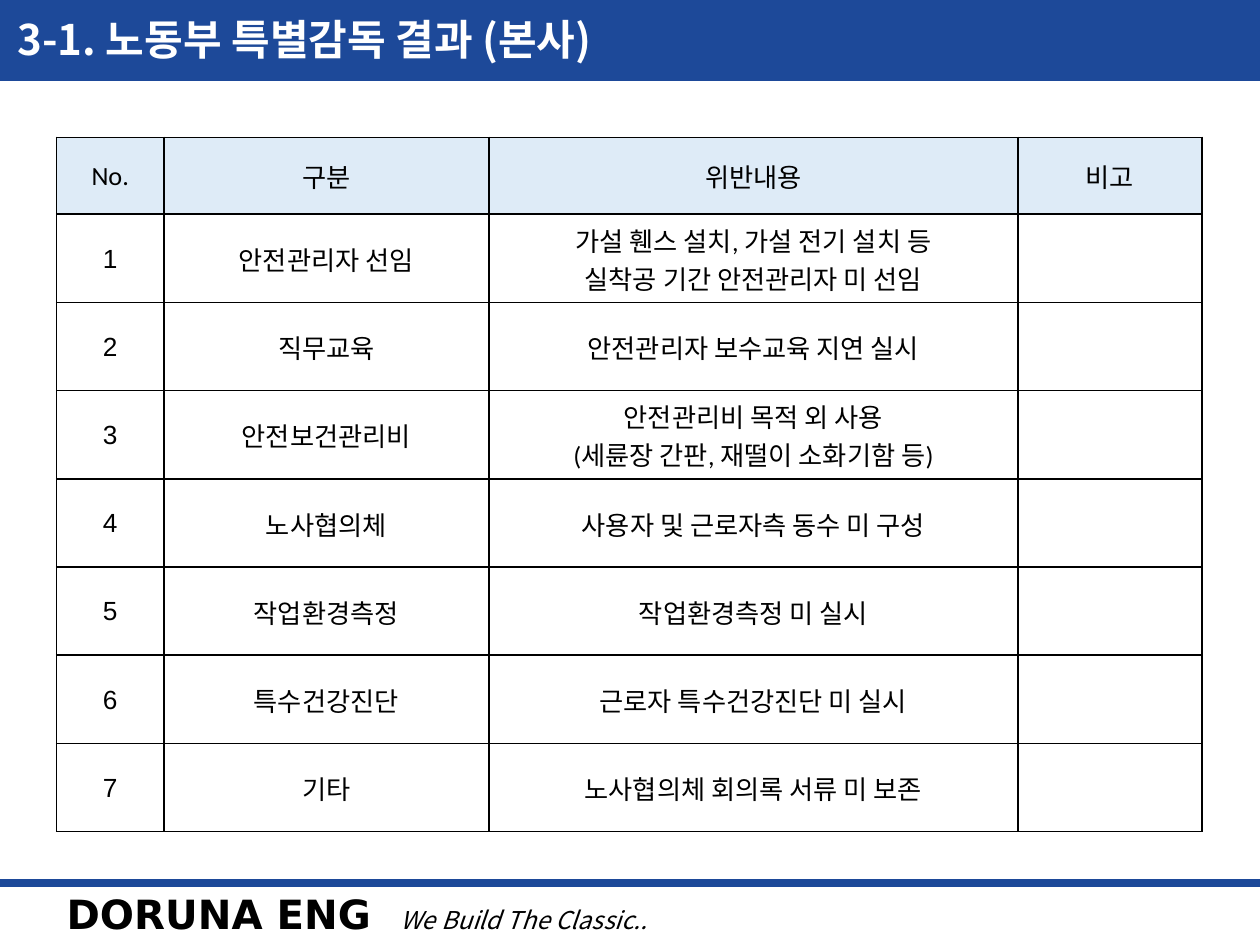
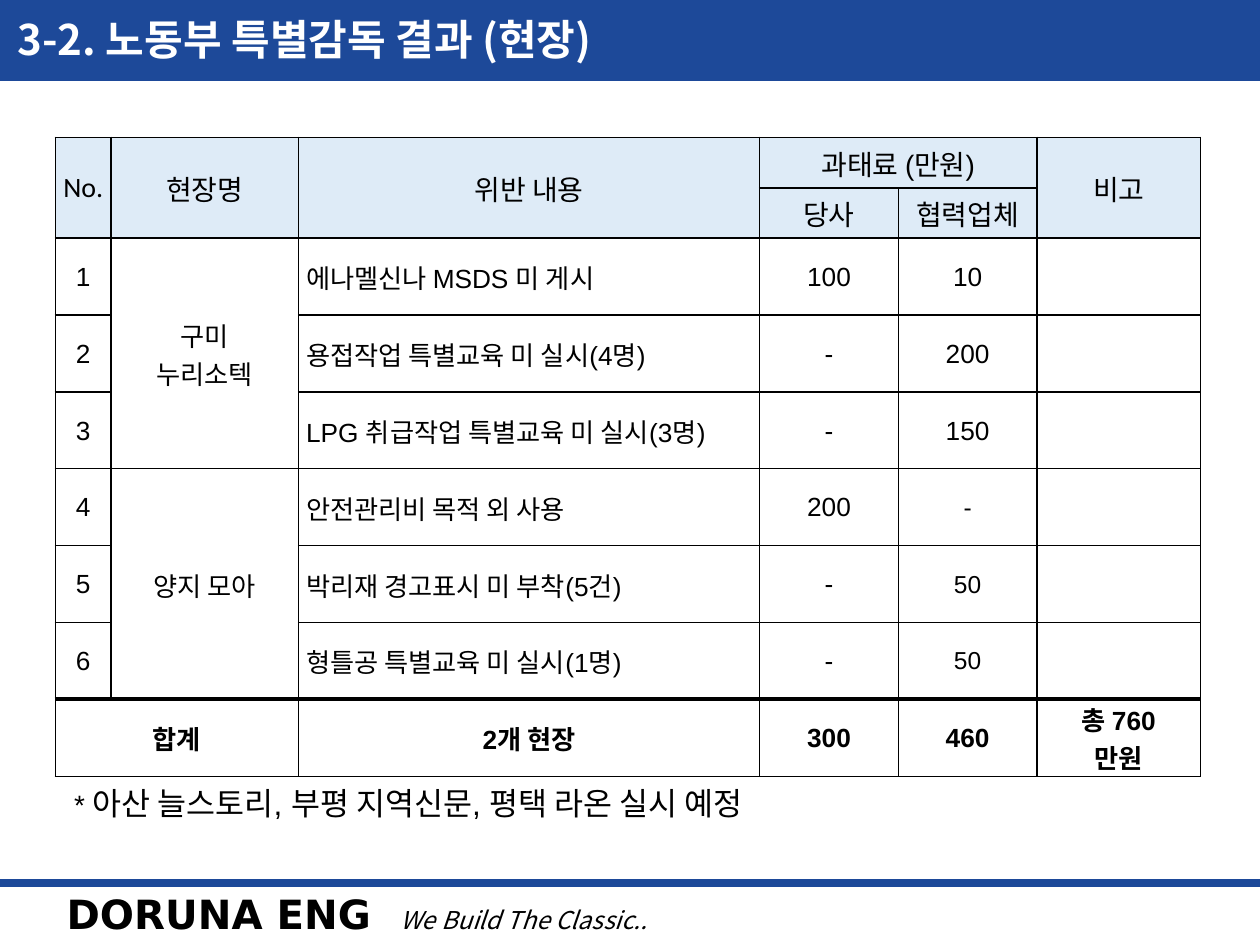
from dataclasses import dataclass

from lxml.etree import SubElement
from pptx import Presentation
from pptx.dml.color import RGBColor
from pptx.enum.shapes import MSO_CONNECTOR, MSO_SHAPE
from pptx.enum.text import MSO_ANCHOR, MSO_AUTO_SIZE, PP_ALIGN
from pptx.oxml.ns import qn
from pptx.util import Inches, Pt


@dataclass(frozen=True)
class Theme:
    blue: RGBColor = RGBColor(0x1D, 0x49, 0x99)
    header_fill: RGBColor = RGBColor(0xDE, 0xEB, 0xF7)
    white: RGBColor = RGBColor(0xFF, 0xFF, 0xFF)
    black: RGBColor = RGBColor(0, 0, 0)
    korean_font: str = "Noto Sans CJK KR"
    number_font: str = "Arial"
    table_font: str = "Calibri"
    company_font: str = "DejaVu Sans"
    title_size: int = 24
    company_size: int = 23
    note_size: int = 18
    header_size: int = 16
    body_size: int = 15
    small_size: int = 14
    rule: float = 1
    heavy_rule: float = 2.25


THEME = Theme()
TABLE_TOP = 1.09

HEAD_OFFICE_ROWS = [
    ["No.", "구분", "위반내용", "비고"],
    ["1", "안전관리자 선임", "가설 휀스 설치, 가설 전기 설치 등\n실착공 기간 안전관리자 미 선임", ""],
    ["2", "직무교육", "안전관리자 보수교육 지연 실시", ""],
    ["3", "안전보건관리비", "안전관리비 목적 외 사용\v(세륜장 간판, 재떨이 소화기함 등)", ""],
    ["4", "노사협의체", "사용자 및 근로자측 동수 미 구성", ""],
    ["5", "작업환경측정", "작업환경측정 미 실시", ""],
    ["6", "특수건강진단", "근로자 특수건강진단 미 실시", ""],
    ["7", "기타", "노사협의체 회의록 서류 미 보존", ""],
]

SITE_ROWS = [
    ["No.", "현장명", "위반 내용", "과태료 (만원)", "", "비고"],
    ["", "", "", "당사", "협력업체", ""],
    ["1", "구미\n누리소텍", "에나멜신나 MSDS 미 게시", "100", "10", ""],
    ["2", "", "용접작업 특별교육 미 실시(4명)", "-", "200", ""],
    ["3", "", "LPG 취급작업 특별교육 미 실시(3명)", "-", "150", ""],
    ["4", "양지 모아", "안전관리비 목적 외 사용", "200", "-", ""],
    ["5", "", "박리재 경고표시 미 부착(5건)", "-", "50", ""],
    ["6", "", "형틀공 특별교육 미 실시(1명)", "-", "50", ""],
    ["합계", "", "2개 현장", "300", "460", "총 760\v만원"],
]
SITE_HEADER_ROWS = 2
SITE_TOTAL_ROW = len(SITE_ROWS) - 1
VIOLATION_COLUMN, FINE_COLUMN, PARTNER_COLUMN = 2, 3, 4
SITE_MERGES = [
    (0, 0, 1, 0), (0, 1, 1, 1), (0, 2, 1, 2), (0, 3, 0, 4), (0, 5, 1, 5),
    (2, 1, 4, 1), (5, 1, 7, 1), (8, 0, 8, 1),
]


def set_values(target, values):
    for name, value in values.items():
        setattr(target, name, value)


def style_run(run, font, size, color=THEME.black, bold=False, italic=False):
    set_values(run.font, {"name": font, "size": Pt(size), "bold": bold, "italic": italic})
    run.font.color.rgb = color
    SubElement(run.font._element, qn("a:ea"), typeface=THEME.korean_font)


def add_run(paragraph, text, font, size, **style):
    run = paragraph.add_run()
    run.text = text
    style_run(run, font, size, **style)


def add_text_box(slide, left, top, width, height, wrap):
    box = slide.shapes.add_textbox(Inches(left), Inches(top), Inches(width), Inches(height))
    box.text_frame.word_wrap = wrap
    return box


def add_title_band(slide):
    band = slide.shapes.add_shape(MSO_SHAPE.RECTANGLE, 0, 0, Inches(10), Inches(0.64))
    band.shadow.inherit = False
    band.fill.solid()
    band.fill.fore_color.rgb = THEME.blue
    band.line.color.rgb = THEME.blue
    band.line.width = Pt(0.75)
    return band


def add_footer_rule(slide):
    rule = slide.shapes.add_connector(
        MSO_CONNECTOR.STRAIGHT, 0, Inches(7.01), Inches(10), Inches(7.01))
    rule.line.color.rgb = THEME.blue
    rule.line.width = Pt(4.5)
    SubElement(rule._element.spPr, qn("a:effectLst"))
    return rule


def add_footer_text(slide):
    box = add_text_box(slide, 0.43, 7.08, 8.18, 0.41, wrap=True)
    paragraph = box.text_frame.paragraphs[0]
    tabs = SubElement(paragraph._p.get_or_add_pPr(), qn("a:tabLst"))
    SubElement(tabs, qn("a:tab"), pos=str(Inches(2.65)), algn="l")
    paragraph.line_spacing = 0.8
    add_run(paragraph, "DORUNA ENG\t", THEME.company_font, THEME.company_size, bold=True)
    add_run(paragraph, "We Build The Classic..", THEME.korean_font, THEME.small_size, italic=True)
    return box


def move_to_layout(layout, shapes):
    """Place shapes behind the layout's placeholders, so that every slide shows them."""
    for position, shape in enumerate(shapes, start=2):
        layout.shapes._spTree.insert(position, shape._element)


def set_title(slide, text):
    title = slide.shapes.title
    set_values(title, {"left": Inches(0.04), "top": Inches(0.06),
                       "width": Inches(9.5), "height": Inches(0.5)})
    frame = title.text_frame
    frame.text = text
    set_values(frame, {"auto_size": MSO_AUTO_SIZE.NONE, "vertical_anchor": MSO_ANCHOR.MIDDLE})
    frame.paragraphs[0].alignment = PP_ALIGN.LEFT
    style_run(frame.paragraphs[0].runs[0], THEME.korean_font, THEME.title_size,
              color=THEME.white, bold=True)


def add_cell_borders(cell, top, bottom):
    properties = cell._tc.get_or_add_tcPr()
    widths = {"a:lnL": THEME.rule, "a:lnR": THEME.rule, "a:lnT": top, "a:lnB": bottom}
    for tag, width in widths.items():
        line = SubElement(properties, qn(tag), w=str(Pt(width)))
        fill = SubElement(line, qn("a:solidFill"))
        SubElement(fill, qn("a:srgbClr"), val=str(THEME.black))


def fill_cell(cell, text, fill, font, size, bold=False,
              alignment=PP_ALIGN.CENTER, margin_left=0.01):
    set_values(cell, {
        "text": text, "vertical_anchor": MSO_ANCHOR.MIDDLE,
        "margin_left": Inches(margin_left), "margin_right": Inches(0.01),
        "margin_top": Inches(0.01), "margin_bottom": 0,
    })
    cell.fill.solid()
    cell.fill.fore_color.rgb = fill
    for paragraph in cell.text_frame.paragraphs:
        paragraph.alignment = alignment
        for run in paragraph.runs:
            style_run(run, font, size, bold=bold)


def add_result_table(slide, rows, left, widths, heights, cell_format, merges=(), total_row=None):
    """cell_format(row, column) gives the look of a cell; a heavy rule runs above total_row."""
    frame = slide.shapes.add_table(
        len(rows), len(widths), Inches(left), Inches(TABLE_TOP),
        Inches(sum(widths)), Inches(sum(heights)))
    table = frame.table
    set_values(table, {"first_row": False, "horz_banding": False})
    for column, width in zip(table.columns, widths):
        column.width = Inches(width)
    for row, height in zip(table.rows, heights):
        row.height = Inches(height)
    for row_index, texts in enumerate(rows):
        top = THEME.heavy_rule if row_index == total_row else THEME.rule
        bottom = THEME.heavy_rule if row_index + 1 == total_row else THEME.rule
        for column_index, text in enumerate(texts):
            cell = table.cell(row_index, column_index)
            add_cell_borders(cell, top, bottom)
            fill_cell(cell, text, **cell_format(row_index, column_index))
    for first_row, first_column, last_row, last_column in merges:
        table.cell(first_row, first_column).merge(table.cell(last_row, last_column))


def head_office_format(row, column):
    is_number = row > 0 and column == 0
    return {
        "fill": THEME.white if row else THEME.header_fill,
        "font": THEME.number_font if is_number else THEME.table_font,
        "size": THEME.body_size,
    }


def site_format(row, column):
    if row < SITE_HEADER_ROWS:
        is_fine = column in (FINE_COLUMN, PARTNER_COLUMN)
        return {"fill": THEME.header_fill, "size": THEME.header_size,
                "font": THEME.number_font if is_fine else THEME.table_font}
    is_total = row == SITE_TOTAL_ROW
    is_small = column == PARTNER_COLUMN and 5 <= row < SITE_TOTAL_ROW
    values = {"fill": THEME.white, "font": THEME.number_font, "bold": is_total,
              "size": THEME.small_size if is_small else THEME.body_size}
    if column == VIOLATION_COLUMN and not is_total:
        values.update(alignment=PP_ALIGN.LEFT, margin_left=0.06)
    return values


def add_note(slide, text):
    box = add_text_box(slide, 0.49, 6.17, 6.16, 0.4, wrap=False)
    paragraph = box.text_frame.paragraphs[0]
    add_run(paragraph, "* ", THEME.number_font, THEME.header_size)
    add_run(paragraph, text, THEME.number_font, THEME.note_size)


def main():
    presentation = Presentation()
    set_values(presentation, {"slide_width": Inches(10), "slide_height": Inches(7.5)})
    layout = presentation.slide_layouts.get_by_name("Title Only")
    head_office = presentation.slides.add_slide(layout)
    move_to_layout(layout, [add_title_band(head_office), add_footer_rule(head_office),
                            add_footer_text(head_office)])

    set_title(head_office, "3-1. 노동부 특별감독 결과 (본사)")
    add_result_table(head_office, HEAD_OFFICE_ROWS, 0.45, [0.85, 2.58, 4.2, 1.46],
                     [0.61] + [0.7] * 7, head_office_format)

    sites = presentation.slides.add_slide(layout)
    set_title(sites, "3-2. 노동부 특별감독 결과 (현장)")
    add_result_table(sites, SITE_ROWS, 0.44, [0.44, 1.49, 3.66, 1.1, 1.1, 1.3],
                     [0.4] * SITE_HEADER_ROWS + [0.61] * 7, site_format,
                     SITE_MERGES, SITE_TOTAL_ROW)
    add_note(sites, "아산 늘스토리, 부평 지역신문, 평택 라온 실시 예정")
    presentation.save("out.pptx")


if __name__ == "__main__":
    main()
